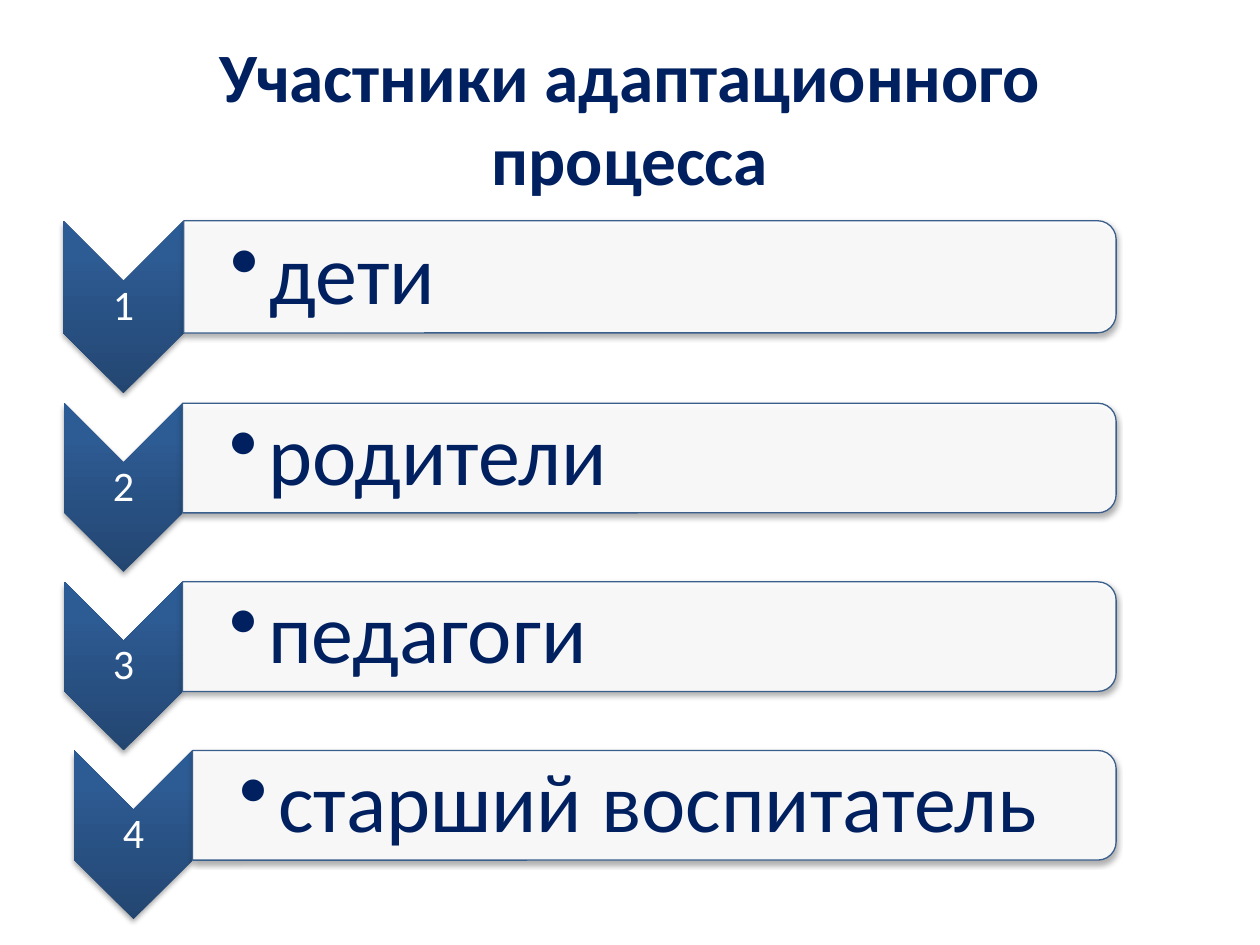
from dataclasses import dataclass

from lxml import etree
from pptx import Presentation
from pptx.dml.color import RGBColor
from pptx.enum import shapes, text
from pptx.oxml import parse_xml
from pptx.oxml.ns import nsdecls, qn
from pptx.util import Cm, Pt

FONT = "Calibri"
NAVY, WHITE, EDGE = "002060", "FFFFFF", "3A5F8C"
STOPS = ((0, "234671"), (80, "2D5B93"), (100, "2B5C96"))
BAR_RIGHT = 22.5


@dataclass
class Step:
    number: str
    label: str
    left: float
    top: float
    height: float  # of the chevron, in cm

    @property
    def width(self) -> float:
        return self.height * 0.7

    @property
    def bar_height(self) -> float:
        return self.height * 0.65


STEPS = (
    Step("1", "дети", 1.27, 4.45, 3.48),
    Step("2", "родители", 1.3, 8.13, 3.4),
    Step("3", "педагоги", 1.3, 11.73, 3.4),
    Step("4", "старший воспитатель", 1.5, 15.13, 3.4),
)


def rgb(value: str) -> RGBColor:
    return RGBColor.from_string(value)


def add_run(p, words: str, size: float, color: str, bold: bool = False) -> None:
    r = p.add_run()
    r.text = words
    r.font.name, r.font.size, r.font.bold = FONT, Pt(size), bold
    r.font.color.rgb = rgb(color)


def add_shadow(sp) -> None:
    sp._element.spPr.append(parse_xml(
        f'<a:effectLst {nsdecls("a")}><a:outerShdw blurRad="40000" dist="23000" '
        'dir="5400000" rotWithShape="0"><a:srgbClr val="000000">'
        '<a:alpha val="35000"/></a:srgbClr></a:outerShdw></a:effectLst>'))


def add_turned(s, kind, left: float, top: float, width: float, height: float):
    """Add a shape turned by 90 degrees that covers the given area."""
    sp = s.shapes.add_shape(
        kind, Cm(left + (width - height) / 2), Cm(top + (height - width) / 2),
        Cm(height), Cm(width))
    sp.rotation = 90
    return sp


def add_box(s, left: float, top: float, width: float, height: float,
            inset: float, left_inset: float):
    tf = s.shapes.add_textbox(Cm(left), Cm(top), Cm(width), Cm(height)).text_frame
    tf.word_wrap = True
    tf.vertical_anchor = text.MSO_ANCHOR.MIDDLE
    tf.margin_top = tf.margin_right = tf.margin_bottom = Cm(inset)
    tf.margin_left = Cm(left_inset)
    p = tf.paragraphs[0]
    p.line_spacing = 0.9
    return p


def add_chevron(s, step: Step) -> None:
    sp = add_turned(s, shapes.MSO_SHAPE.CHEVRON, step.left, step.top,
                    step.width, step.height)
    stops = "".join(f'<a:gs pos="{pos * 1000}"><a:srgbClr val="{color}"/></a:gs>'
                    for pos, color in STOPS)
    sp._element.spPr.append(parse_xml(
        f'<a:gradFill {nsdecls("a")} rotWithShape="0"><a:gsLst>{stops}</a:gsLst>'
        '<a:lin ang="16200000" scaled="0"/></a:gradFill>'))
    sp.line.fill.background()
    add_shadow(sp)
    # Number in the middle of the chevron
    p = add_box(s, step.left, step.top + step.width / 2, step.width,
                step.height - step.width, 0.04, 0.04)
    p.alignment = text.PP_ALIGN.CENTER
    add_run(p, step.number, 24, WHITE)


def add_bar(s, step: Step) -> None:
    left = step.left + step.width
    width = BAR_RIGHT - left
    sp = add_turned(s, shapes.MSO_SHAPE.ROUND_2_SAME_RECTANGLE, left, step.top,
                    width, step.bar_height)
    sp.fill.solid()
    sp.fill.fore_color.rgb = rgb(WHITE)
    color = sp._element.spPr.find(qn("a:solidFill")).find(qn("a:srgbClr"))
    etree.SubElement(color, qn("a:alpha"), val="90000")
    sp.line.color.rgb = rgb(EDGE)
    sp.line.width = Pt(0.75)
    add_shadow(sp)
    # Bulleted label
    p = add_box(s, left, step.top + 0.11, width - 0.11, step.bar_height - 0.22,
                0.08, 0.94)
    p.level = 1
    pPr = p._p.get_or_add_pPr()
    pPr.set("marL", str(Cm(0.79)))
    pPr.set("indent", str(-Cm(0.79)))
    etree.SubElement(pPr, qn("a:buChar"), char="•")
    add_run(p, step.label, 48, NAVY)


def main() -> None:
    prs = Presentation()
    prs.slide_width, prs.slide_height = Cm(25.4), Cm(19.05)
    s = prs.slides.add_slide(prs.slide_layouts[5])

    # Title
    title = s.shapes.title
    title.left, title.top, title.width, title.height = (
        Cm(1.27), Cm(0.76), Cm(22.86), Cm(3.18))
    tf = title.text_frame
    tf.vertical_anchor = text.MSO_ANCHOR.MIDDLE
    p = tf.paragraphs[0]
    p.alignment = text.PP_ALIGN.CENTER
    add_run(p, "Участники адаптационного процесса", 39.6, NAVY, bold=True)

    # Numbered steps
    for step in STEPS:
        add_chevron(s, step)
        add_bar(s, step)

    prs.save("out.pptx")


if __name__ == "__main__":
    main()
